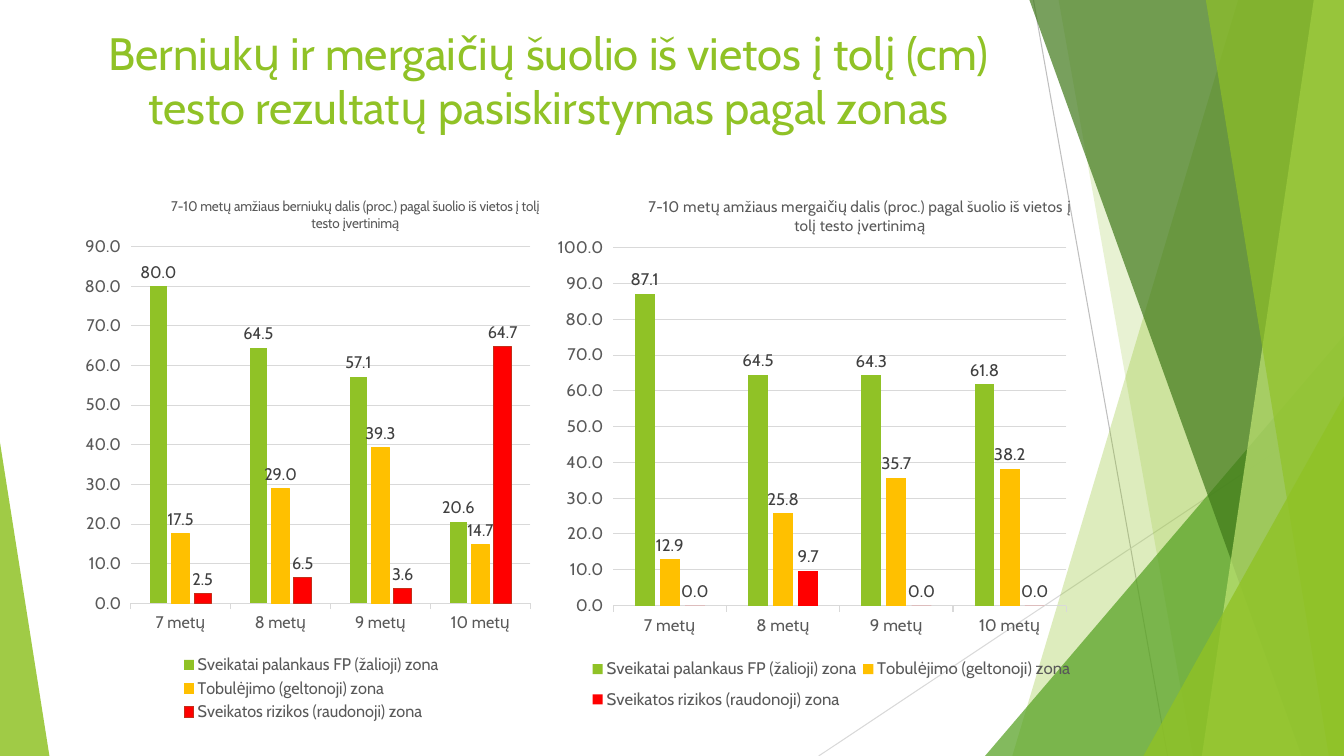
from dataclasses import dataclass

from lxml import etree
from pptx import Presentation
from pptx.chart.data import CategoryChartData
from pptx.dml.color import RGBColor
from pptx.enum.chart import XL_CHART_TYPE as ChartType
from pptx.enum.chart import XL_LABEL_POSITION as LabelPosition
from pptx.enum.chart import XL_LEGEND_POSITION as LegendPosition
from pptx.enum.chart import XL_TICK_MARK as TickMark
from pptx.enum.shapes import MSO_CONNECTOR as Connector
from pptx.enum.shapes import MSO_SHAPE as Shape
from pptx.enum.text import PP_ALIGN as Align
from pptx.oxml import parse_xml
from pptx.oxml.ns import nsdecls, qn
from pptx.util import Inches, Pt

FONT = "Cabin"
GREEN = RGBColor(0x90, 0xC2, 0x26)
MID_GREEN = RGBColor(0x54, 0xA0, 0x21)
DARK_GREEN = RGBColor(0x3F, 0x78, 0x19)
LIGHT_GREEN = RGBColor(0xC0, 0xE4, 0x74)
YELLOW = RGBColor(0xFF, 0xC0, 0x00)
RED = RGBColor(0xFF, 0x00, 0x00)
DARK_RED = RGBColor(0xC4, 0x2F, 0x1A)
LINE_GRAY = RGBColor(0xBF, 0xBF, 0xBF)
GRID_GRAY = RGBColor(0xD9, 0xD9, 0xD9)
TEXT_GRAY = RGBColor(0x59, 0x59, 0x59)
LABEL_GRAY = RGBColor(0x40, 0x40, 0x40)
WIDTH, HEIGHT = 13.33, 7.5

AGES = ["7 metų", "8 metų", "9 metų", "10 metų"]
ZONES = [
    ("Sveikatai palankaus FP (žalioji) zona", GREEN),
    ("Tobulėjimo (geltonoji) zona", YELLOW),
    ("Sveikatos rizikos (raudonoji) zona", RED),
]


@dataclass
class Ray:
    start: tuple[float, float]
    end: tuple[float, float]
    color: RGBColor


@dataclass
class Band:
    """Facet that reaches the right edge; top and bottom are its left corners."""
    top: float
    bottom: float
    color: RGBColor
    opacity: int


@dataclass
class Corner:
    """Triangle standing on the bottom edge, its apex over one end."""
    left: float
    top: float
    width: float
    apex: float
    color: RGBColor
    opacity: int


@dataclass
class ZoneChart:
    title: str
    title_size: int
    box: tuple[float, float, float, float]
    maximum: int
    values: list[list[float]]
    outlines: list[RGBColor | None]
    title_layout: tuple[float, ...]
    plot_layout: tuple[float, ...]
    legend_layout: tuple[float, ...]


RAYS = [
    Ray((10.25, 0), (11.58, HEIGHT), LINE_GRAY),
    Ray((WIDTH, 4.03), (8.12, HEIGHT), GRID_GRAY),
]
FACETS = [
    Band(12.28, 10.04, GREEN, 30),
    Band(10.5, 11.83, GREEN, 20),
    Corner(9.77, 3.33, 3.56, 1, MID_GREEN, 72),
    Band(10.21, 12.91, DARK_GREEN, 70),
    Band(13.03, 11.92, LIGHT_GREEN, 70),
    Band(11.96, 13.18, GREEN, 65),
    Corner(11.34, 3.93, 1.99, 1, GREEN, 80),
    Corner(0, 4.39, 0.49, 0, GREEN, 85),
]
CHARTS = [
    ZoneChart(
        "7-10 metų amžiaus berniukų dalis (proc.) pagal šuolio iš vietos į tolį testo įvertinimą",
        10, (0.54, 1.92, 4.9, 5.28), 90,
        [[80, 64.5, 57.1, 20.6], [17.5, 29, 39.3, 14.7], [2.5, 6.5, 3.6, 64.7]],
        [None, YELLOW, DARK_RED],
        (0.24, 0), (0.24, 0.1, 0.84, 0.67), (0.23, 0.86, 0.62, 0.14)),
    ZoneChart(
        "7-10 metų amžiaus mergaičių dalis (proc.) pagal šuolio iš vietos į tolį testo įvertinimą",
        11, (5.44, 1.92, 5.35, 5.38), 100,
        [[87.1, 64.5, 64.3, 61.8], [12.9, 25.8, 35.7, 38.2], [0, 9.7, 0, 0]],
        [None, None, None],
        (0.18, 0), (0.12, 0.1, 0.84, 0.66), (0.07, 0.84, 0.91, 0.13)),
]


def add_ray(slide, ray: Ray) -> None:
    points = [Inches(value) for value in (*ray.start, *ray.end)]
    connector = slide.shapes.add_connector(Connector.STRAIGHT, *points)
    connector.line.color.rgb = ray.color
    connector.line.width = Pt(0.75)
    etree.SubElement(connector._element.spPr, qn("a:effectLst"))


def add_facet(slide, facet: Band | Corner) -> None:
    if isinstance(facet, Band):
        builder = slide.shapes.build_freeform(Inches(facet.top), 0, scale=1.0)
        corners = [(WIDTH, 0), (WIDTH, HEIGHT), (facet.bottom, HEIGHT)]
        builder.add_line_segments([(Inches(x), Inches(y)) for x, y in corners])
        shape = builder.convert_to_shape()
    else:
        shape = slide.shapes.add_shape(
            Shape.ISOSCELES_TRIANGLE, Inches(facet.left), Inches(facet.top),
            Inches(facet.width), Inches(HEIGHT - facet.top))
        shape.adjustments[0] = facet.apex
    shape.shadow.inherit = False
    shape.line.fill.background()
    shape.fill.solid()
    shape.fill.fore_color.rgb = facet.color
    color = shape._element.spPr.find(".//" + qn("a:srgbClr"))
    etree.SubElement(color, qn("a:alpha"), val=str(facet.opacity * 1000))


def format_font(font, size: float, color: RGBColor) -> None:
    font.name = FONT
    font.size = Pt(size)
    font.bold = False
    font.color.rgb = color


def write_text(frame, text: str, *, size: float, color: RGBColor) -> None:
    paragraph = frame.paragraphs[0]
    paragraph.alignment = Align.CENTER
    run = paragraph.add_run()
    run.text = text
    format_font(run.font, size, color)


def set_layout(element, index: int, layout: tuple[float, ...], inner: bool = False) -> None:
    """Place a chart part by fractions of the chart: x, y and optionally w, h."""
    for old in element.findall(qn("c:layout")):
        element.remove(old)
    names = ("x", "y", "w", "h")[:len(layout)]
    target = '<c:layoutTarget val="inner"/>' if inner else ""
    modes = "".join(f'<c:{name}Mode val="edge"/>' for name in names[:2])
    values = "".join(f'<c:{name} val="{value}"/>' for name, value in zip(names, layout))
    element.insert(index, parse_xml(
        f'<c:layout {nsdecls("c")}><c:manualLayout>{target}{modes}{values}'
        "</c:manualLayout></c:layout>"))


def clear_background(chart) -> None:
    no_fill = f'<c:spPr {nsdecls("c", "a")}><a:noFill/><a:ln><a:noFill/></a:ln></c:spPr>'
    space = chart._chartSpace
    space.find(qn("c:chart")).addnext(parse_xml(no_fill))
    space.find(".//" + qn("c:plotArea")).append(parse_xml(no_fill))


def add_zone_chart(slide, zone_chart: ZoneChart) -> None:
    data = CategoryChartData(number_format="0.0")
    data.categories = AGES
    for (name, _), values in zip(ZONES, zone_chart.values):
        data.add_series(name, values)
    box = [Inches(value) for value in zone_chart.box]
    chart = slide.shapes.add_chart(ChartType.COLUMN_CLUSTERED, *box, data).chart
    format_font(chart.font, 12, TEXT_GRAY)

    chart.has_title = True
    write_text(chart.chart_title.text_frame, zone_chart.title,
               size=zone_chart.title_size, color=TEXT_GRAY)
    chart.has_legend = True
    chart.legend.position = LegendPosition.RIGHT
    chart.legend.include_in_layout = False
    format_font(chart.legend.font, 12, TEXT_GRAY)

    for axis in (chart.category_axis, chart.value_axis):
        format_font(axis.tick_labels.font, 12, TEXT_GRAY)
    chart.category_axis.major_tick_mark = TickMark.OUTSIDE
    chart.category_axis.format.line.color.rgb = GRID_GRAY
    chart.category_axis.format.line.width = Pt(0.75)
    value_axis = chart.value_axis
    value_axis.minimum_scale, value_axis.maximum_scale = 0, zone_chart.maximum
    value_axis.major_unit = 10
    value_axis.major_tick_mark = TickMark.OUTSIDE
    value_axis.format.line.fill.background()
    value_axis.major_gridlines.format.line.color.rgb = GRID_GRAY
    value_axis.major_gridlines.format.line.width = Pt(0.75)
    value_axis.tick_labels.number_format = "0.0"
    value_axis.tick_labels.number_format_is_linked = False

    plot = chart.plots[0]
    plot.gap_width, plot.overlap = 219, -27
    plot.vary_by_categories = False
    for series, (_, color), outline in zip(plot.series, ZONES, zone_chart.outlines):
        series.format.fill.solid()
        series.format.fill.fore_color.rgb = color
        if outline:
            series.format.line.color.rgb = outline
            series.format.line.width = Pt(0.75)
        labels = series.data_labels
        labels.show_value = True
        labels.position = LabelPosition.OUTSIDE_END
        labels.number_format = "0.0"
        labels.number_format_is_linked = False
        format_font(labels.font, 12, LABEL_GRAY)

    set_layout(chart.chart_title._element, 1, zone_chart.title_layout)
    set_layout(chart.legend._element, 1, zone_chart.legend_layout)
    plot_area = chart._chartSpace.find(".//" + qn("c:plotArea"))
    set_layout(plot_area, 0, zone_chart.plot_layout, inner=True)
    clear_background(chart)


def main() -> None:
    presentation = Presentation()
    presentation.slide_width, presentation.slide_height = Inches(WIDTH), Inches(HEIGHT)
    slide = presentation.slides.add_slide(presentation.slide_layouts[6])
    for ray in RAYS:
        add_ray(slide, ray)
    for facet in FACETS:
        add_facet(slide, facet)
    heading = slide.shapes.add_textbox(Inches(0.74), Inches(0.2), Inches(9.4), Inches(1.56))
    heading.text_frame.word_wrap = True
    write_text(heading.text_frame,
               "Berniukų ir mergaičių šuolio iš vietos į tolį (cm) "
               "testo rezultatų pasiskirstymas pagal zonas", size=32.4, color=GREEN)
    for zone_chart in CHARTS:
        add_zone_chart(slide, zone_chart)
    presentation.save("out.pptx")


if __name__ == "__main__":
    main()
